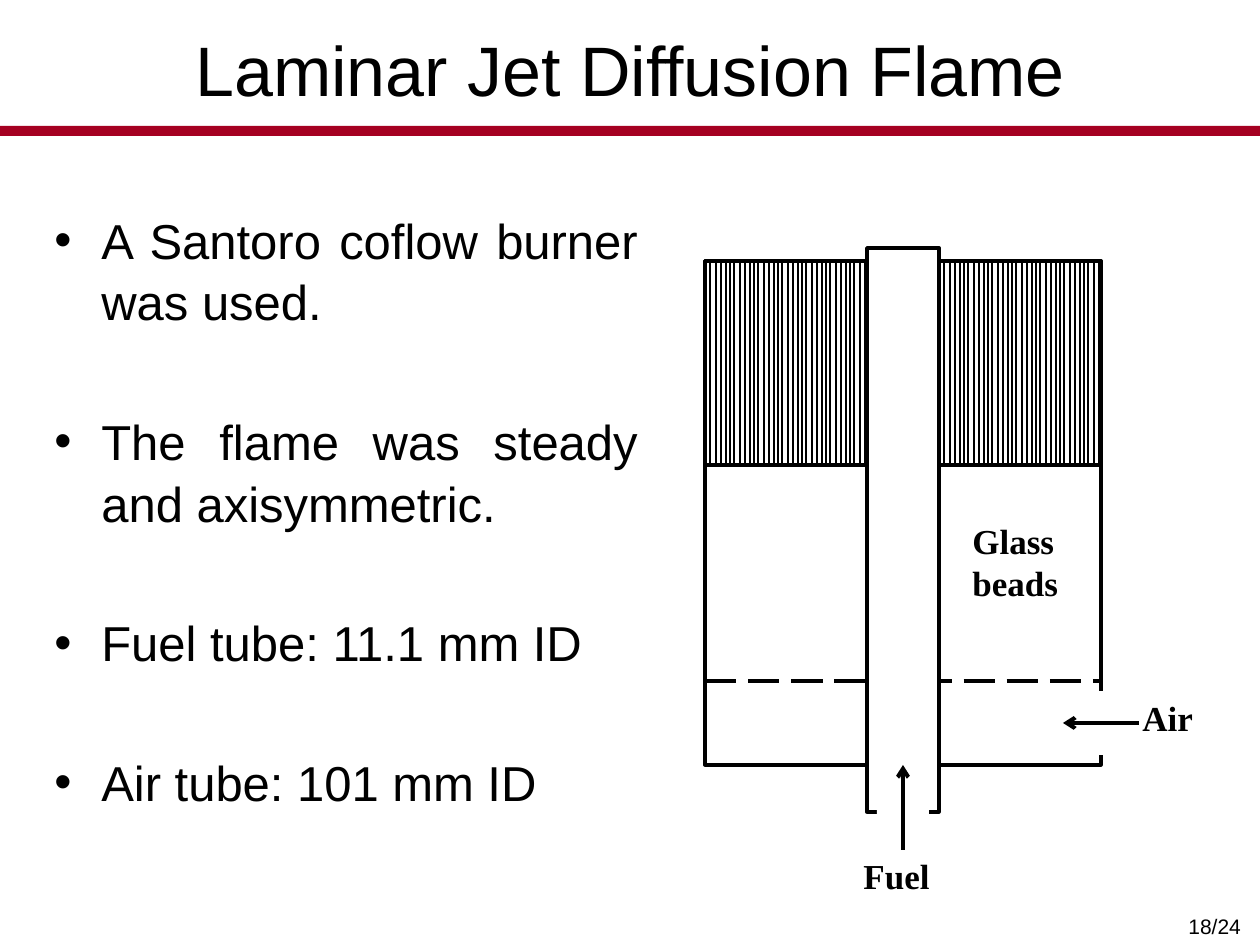
from lxml.etree import SubElement
from pptx import Presentation
from pptx.dml.color import RGBColor
from pptx.enum.dml import MSO_LINE
from pptx.enum.shapes import MSO_CONNECTOR, MSO_SHAPE
from pptx.enum.text import MSO_ANCHOR, PP_ALIGN
from pptx.oxml.ns import qn
from pptx.util import Pt

PX = 914400 / 126
BLACK, WHITE, RED = "000000", "FFFFFF", "A50021"


def px(*lengths):
    return [round(length * PX) for length in lengths]


color = RGBColor.from_string

prs = Presentation()
prs.slide_width, prs.slide_height = px(1260, 945)
slide = prs.slides.add_slide(prs.slide_layouts[5])
shapes = slide.shapes


def add_line(x1, y1, x2, y2, weight):
    line = shapes.add_connector(MSO_CONNECTOR.STRAIGHT, *px(x1, y1, x2, y2))
    line.line.color.rgb = color(BLACK)
    line.line.width = Pt(weight)
    SubElement(line._element.spPr, qn("a:effectLst"))
    return line


def add_rect(box, fill, outline):
    rect = shapes.add_shape(MSO_SHAPE.RECTANGLE, *px(*box))
    rect.shadow.inherit = False
    if fill:
        rect.fill.solid()
        rect.fill.fore_color.rgb = color(fill)
    else:
        rect.fill.background()
    if outline:
        rect.line.color.rgb = color(outline)
        rect.line.width = Pt(2)
    else:
        rect.line.fill.background()


# Title and rule
add_rect((0, 126, 1260, 10), RED, None)
title = shapes.title
title.left, title.top, title.width, title.height = px(63, 20, 1134, 97)
title.text_frame.text = "Laminar Jet Diffusion Flame"
title.text_frame.vertical_anchor = MSO_ANCHOR.MIDDLE
heading = title.text_frame.paragraphs[0]
heading.alignment = PP_ALIGN.CENTER
heading.font.name, heading.font.size = "Arial", Pt(40)
heading.font.color.rgb = color(BLACK)

# Burner facts
facts = shapes.add_textbox(*px(42, 201, 608, 619)).text_frame
facts.word_wrap = True
facts.text = "\n".join([
    "A Santoro coflow burner was used.",
    "The flame was steady and axisymmetric.",
    "Fuel tube: 11.1 mm ID",
    "Air tube: 101 mm ID",
])
for number, fact in enumerate(facts.paragraphs):
    fact.alignment = PP_ALIGN.JUSTIFY
    fact.line_spacing = 1.05
    if number:
        fact.space_before = Pt(44.5)
    props = fact._p.get_or_add_pPr()
    indent = px(47)[0]
    props.set("marL", str(indent))
    props.set("indent", str(-indent))
    SubElement(props, qn("a:buFont"), typeface="Arial")
    SubElement(props, qn("a:buChar"), char="•")
    fact.font.name, fact.font.size = "Arial", Pt(28)
    fact.font.color.rgb = color(BLACK)

# Burner body, perforated plate and fuel tube
add_rect((705, 261, 396, 504), None, BLACK)
plate = add_line(705, 681, 1099, 681, 2.25)
plate.line.dash_style = MSO_LINE.LONG_DASH
add_rect((867, 248, 72, 564), WHITE, BLACK)

# Honeycomb on both sides of the tube
for left in (939, 705):
    add_rect((left, 261, 162, 204), None, BLACK)
    for offset in (5, 11, 16, 21, 25):
        for x in range(left + offset, left + 162, 24):
            add_line(x, 261, x, 465, 0.75)

# Openings and inflow arrows
add_rect((1084, 693, 41, 60), WHITE, WHITE)
add_rect((877, 789, 52, 48), WHITE, None)
air = add_line(1139, 723, 1063, 723, 2.25)
fuel = add_line(903, 850, 903, 765, 2.25)
for inflow in (air, fuel):
    SubElement(inflow.line._get_or_add_ln(), qn("a:tailEnd"), type="arrow")

# Labels and page number
SERIF = "Times New Roman"
for text, box, wrap, font, size, bold in [
    ("Air", (1130, 690, 87, 63), False, SERIF, 20, True),
    ("Fuel", (851, 848, 106, 63), False, SERIF, 20, True),
    ("Glass beads", (960, 513, 161, 112), True, SERIF, 20, True),
    ("18/24", (1176, 907, 81, 38), False, "Arial", 12, False),
]:
    label = shapes.add_textbox(*px(*box)).text_frame
    label.word_wrap = wrap
    label.text = text
    words = label.paragraphs[0].runs[0].font
    words.name, words.size, words.bold = font, Pt(size), bold
    words.color.rgb = color(BLACK)

prs.save("out.pptx")
